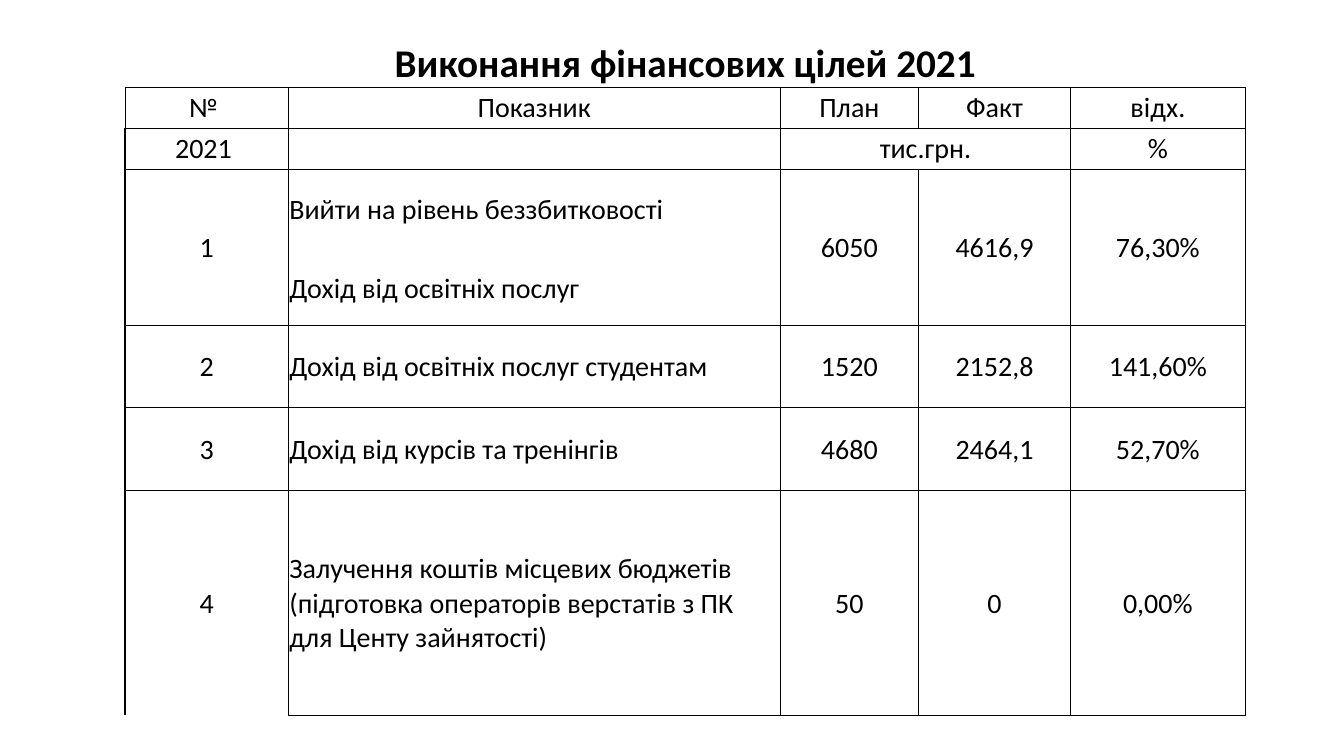
from dataclasses import dataclass

from lxml.etree import SubElement
from pptx import Presentation
from pptx.dml.color import RGBColor
from pptx.enum.text import MSO_ANCHOR as Anchor, PP_ALIGN as Align
from pptx.oxml.ns import qn
from pptx.util import Inches, Pt


@dataclass(frozen=True)
class Theme:
    """Colours, type sizes and line widths of the slide."""
    font: str = "Calibri"
    ink: str = "000000"
    title_size: int = 28
    body_size: int = 20
    thin: float = 0.5
    thick: float = 1
    inset: float = 0.01


THEME = Theme()
COLUMNS = [1.62, 4.88, 1.37, 1.51, 1.73]
ROWS = [0.49, 0.4, 0.41, 0.8, 0.75, 0.81, 0.82, 2.23]
TARGETS = [
    ["Виконання фінансових цілей 2021", "", "", "", ""],
    ["№ ", "Показник", "План", "Факт", "відх."],
    ["2021\u00a0", "", "тис.грн.", "", "%"],
    ["1", "Вийти на рівень беззбитковості", "6050", "4616,9", "76,30%"],
    ["", "Дохід від освітніх послуг", "", "", ""],
    ["2", "Дохід від освітніх послуг студентам", "1520", "2152,8", "141,60%"],
    ["3", "Дохід від курсів та тренінгів", "4680", "2464,1", "52,70%"],
    ["4", "Залучення коштів місцевих бюджетів (підготовка операторів "
          "верстатів з ПК для Центу зайнятості)", "50", "0", "0,00%"],
]
TITLE, HEADER, UNITS, FIRST_TOP, FIRST_BOTTOM = range(5)
LAST_ROW, LAST_COLUMN, INDICATOR = len(ROWS) - 1, len(COLUMNS) - 1, 1
MERGES = [((TITLE, 0), (TITLE, LAST_COLUMN)), ((UNITS, 2), (UNITS, 3))] + [
    ((FIRST_TOP, column), (FIRST_BOTTOM, column)) for column in (0, 2, 3, 4)]


def edge_widths(row, column):
    """Return the line width of each drawn edge of a cell."""
    thin, thick = THEME.thin, THEME.thick
    if row == TITLE:
        return {"B": thick if column == LAST_COLUMN else thin}
    edges = dict.fromkeys("LRTB", thin if row == HEADER else thick)
    if row == UNITS:
        edges["T"] = thin
    if (row, column) == (HEADER, LAST_COLUMN) or row == FIRST_BOTTOM:
        del edges["T"]
    if row == FIRST_TOP or (row, column) == (LAST_ROW, 0):
        del edges["B"]
    return edges


def draw_edges(cell, edges):
    """Draw the given edges of a cell and clear the others."""
    properties = cell._tc.get_or_add_tcPr()
    for side in "LRTB":
        line = SubElement(properties, qn(f"a:ln{side}"),
                          w=str(int(Pt(edges.get(side, 0)))))
        if side in edges:
            fill = SubElement(line, qn("a:solidFill"))
            SubElement(fill, qn("a:srgbClr"), val=THEME.ink)
        else:
            SubElement(line, qn("a:noFill"))


def write(cell, text, size=THEME.body_size, bold=False, align=Align.CENTER,
          anchor=Anchor.MIDDLE):
    """Put formatted text in a cell."""
    cell.margin_left = cell.margin_right = cell.margin_top = Inches(THEME.inset)
    cell.margin_bottom = 0
    cell.vertical_anchor = anchor
    para = cell.text_frame.paragraphs[0]
    para.alignment = align
    para.font.size = Pt(size)
    if text:
        span = para.add_run()
        span.text = text
        span.font.name = THEME.font
        span.font.size = Pt(size)
        span.font.bold = bold
        span.font.color.rgb = RGBColor.from_string(THEME.ink)


def cell_format(row, column):
    """Return the text format of a cell by its place in the table."""
    if row == TITLE:
        return dict(size=THEME.title_size, bold=True, anchor=Anchor.BOTTOM)
    if row >= FIRST_TOP and column == INDICATOR:
        return dict(align=Align.LEFT)
    return {}


def add_targets_table(page, left, top, width, height):
    """Place the table of financial targets in the given box."""
    table = page.shapes.add_table(
        len(ROWS), len(COLUMNS), Inches(left), Inches(top),
        Inches(width), Inches(height)).table
    table.first_row = table.horz_banding = False
    for column, share in zip(table.columns, COLUMNS):
        column.width = Inches(width * share / sum(COLUMNS))
    for row, share in zip(table.rows, ROWS):
        row.height = Inches(height * share / sum(ROWS))
    for row, texts in enumerate(TARGETS):
        for column, text in enumerate(texts):
            cell = table.cell(row, column)
            write(cell, text, **cell_format(row, column))
            draw_edges(cell, edge_widths(row, column))
            cell.fill.background()
    for first, last in MERGES:
        table.cell(*first).merge(table.cell(*last))


def main():
    """Build the deck and save it."""
    deck = Presentation()
    deck.slide_width, deck.slide_height = Inches(13.33), Inches(7.5)
    page = deck.slides.add_slide(deck.slide_layouts[6])
    add_targets_table(page, 1.24, 0.38, 11.11, 6.72)
    deck.save("out.pptx")


if __name__ == "__main__":
    main()
